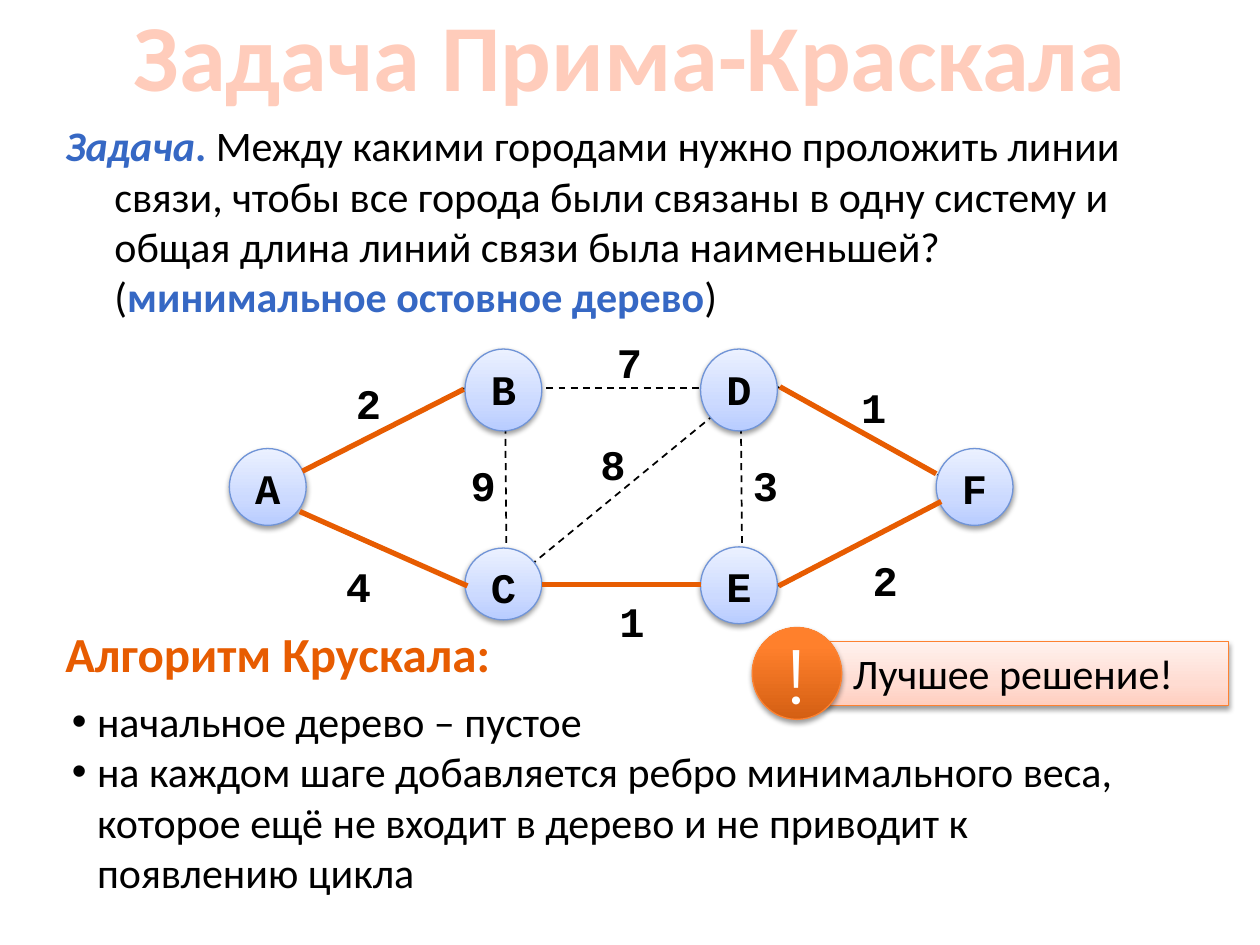
import pptx
import pptx.util
import pptx.dml.color
import pptx.enum.dml
import pptx.enum.shapes
import pptx.enum.text
import pptx.oxml
import pptx.oxml.ns
from lxml import etree

COLORS = {
    "page": "FFFFFF", "text": "000000", "title": "FFCCBB", "term": "3668C4",
    "tree": "E75C01", "node_line": "7094D7", "note_line": "FD8231",
}
GRADIENTS = {
    "node": [(0, "B8CCFF"), (35, "CCDAFF"), (100, "EBF1FF")],
    "note": [(0, "FFCEBF"), (35, "FFDCD2"), (100, "FFF2EE")],
    "badge": [(0, "D45F13"), (80, "FF802C"), (100, "FF812E")],
}
BODY = {"name": "Calibri", "size": pptx.util.Pt(24), "bold": False, "italic": False}
GRAPH = {**BODY, "name": "Courier New", "bold": True}
TERM = {**BODY, "bold": True}
OVAL = pptx.enum.shapes.MSO_SHAPE.OVAL
RECT = pptx.enum.shapes.MSO_SHAPE.RECTANGLE
ALIGN = pptx.enum.text.PP_ALIGN
ANCHOR = pptx.enum.text.MSO_ANCHOR


def rgb(key):
    return pptx.dml.color.RGBColor.from_string(COLORS[key])


def set_attributes(target, values):
    for name, value in values.items():
        setattr(target, name, value)


def add_xml(parent, tag, **attributes):
    child = etree.SubElement(parent, pptx.oxml.ns.qn(tag))
    for name, value in attributes.items():
        child.set(name, str(value))
    return child


class GraphSlide:
    """Places elements on a grid of 100 columns by 75 rows."""

    def __init__(self, deck):
        self.cell = deck.slide_width // 100
        self.slide = deck.slides.add_slide(deck.slide_layouts[1])
        self.shapes = self.slide.shapes
        background = self.slide.background.fill
        background.solid()
        background.fore_color.rgb = rgb("page")

    def grid(self, *values):
        return [round(value * self.cell) for value in values]

    def move(self, shape, box):
        set_attributes(shape, dict(zip(("left", "top", "width", "height"), self.grid(*box))))

    def frame(self, shape, insets=(1, 0.5, 1, 0.5), anchor=ANCHOR.TOP, wrap=True):
        names = ("margin_left", "margin_top", "margin_right", "margin_bottom")
        set_attributes(shape.text_frame, {
            "word_wrap": wrap, "vertical_anchor": anchor,
            "auto_size": pptx.enum.text.MSO_AUTO_SIZE.NONE,
            **dict(zip(names, self.grid(*insets))),
        })
        return shape.text_frame

    def fill_paragraph(self, paragraph, runs, align=ALIGN.LEFT, hanging=0):
        """Fill a paragraph with (text, font, colour) runs; None breaks the line."""
        set_attributes(paragraph, {"alignment": align, "space_before": pptx.util.Pt(0)})
        margin, = self.grid(hanging)
        properties = paragraph._p.get_or_add_pPr()
        properties.set("marL", str(margin))
        properties.set("indent", str(-margin))
        for part in runs:
            if part is None:
                paragraph.add_line_break()
                continue
            words, font, color = part
            run = paragraph.add_run()
            run.text = words
            set_attributes(run.font, font)
            run.font.color.rgb = rgb(color)

    def title(self, words, box):
        title = self.shapes.title
        self.move(title, box)
        font = {**TERM, "size": pptx.util.Pt(54)}
        frame = self.frame(title, anchor=ANCHOR.MIDDLE)
        self.fill_paragraph(frame.paragraphs[0], [(words, font, "title")], ALIGN.CENTER)

    def bullets(self, items, box):
        body = self.slide.placeholders[1]
        self.move(body, box)
        frame = self.frame(body)
        for number, item in enumerate(items):
            paragraph = frame.add_paragraph() if number else frame.paragraphs[0]
            self.fill_paragraph(paragraph, [(item, BODY, "text")], hanging=2)
            add_xml(paragraph._p.get_or_add_pPr(), "a:buChar", char="•")

    def text(self, runs, box, hanging=0, wrap=True):
        textbox = self.shapes.add_textbox(*self.grid(*box))
        frame = self.frame(textbox, wrap=wrap)
        self.fill_paragraph(frame.paragraphs[0], runs, hanging=hanging)

    def line(self, start, end, color, width, dashed=False):
        edge = self.shapes.add_connector(
            pptx.enum.shapes.MSO_CONNECTOR.STRAIGHT, *self.grid(*start, *end))
        edge.line.color.rgb = rgb(color)
        edge.line.width = pptx.util.Pt(width)
        if dashed:
            edge.line.dash_style = pptx.enum.dml.MSO_LINE.DASH
        add_xml(edge._element.spPr, "a:effectLst")

    def shape(self, kind, box, run, align=ALIGN.CENTER, gradient=None, outline=None, **layout):
        shape = self.shapes.add_shape(kind, *self.grid(*box))
        shape.shadow.inherit = False
        if gradient:
            shape.line.color.rgb = rgb(outline)
            shape.line.width = pptx.util.Pt(0.75)
            self.shade(shape, GRADIENTS[gradient])
        else:
            shape.fill.background()
            shape.line.fill.background()
        self.fill_paragraph(self.frame(shape, **layout).paragraphs[0], [run], align)

    def shade(self, shape, stops):
        """Give a shape an upward gradient and a soft shadow below."""
        shape.fill.gradient()
        shape.fill.gradient_angle = 90
        stop_list = shape._element.spPr.find(".//" + pptx.oxml.ns.qn("a:gsLst"))
        for old in list(stop_list):
            stop_list.remove(old)
        for position, color in stops:
            stop = add_xml(stop_list, "a:gs", pos=position * 1000)
            add_xml(stop, "a:srgbClr", val=color)
        effects = shape._element.spPr.find(pptx.oxml.ns.qn("a:effectLst"))
        shadow = add_xml(effects, "a:outerShdw", blurRad=pptx.util.Pt(3.1),
                         dist=pptx.util.Pt(1.6), dir=5400000, rotWithShape=0)
        add_xml(add_xml(shadow, "a:srgbClr", val="000000"), "a:alpha", val=38000)

    def node(self, letter, column, top, height):
        self.shape(OVAL, (18.2 + 18.7 * column, top, 6.1, height), (letter, GRAPH, "text"),
                   gradient="node", outline="node_line", insets=(0, 0.2, 0, 0))

    def weight(self, value, left, top):
        self.shape(OVAL, (left, top, 6.5, 6.1), (value, GRAPH, "text"), insets=(0, 0, 0, 0))


POSSIBLE_EDGES = [
    ((42.4, 30.8), (56.7, 30.8)), ((23.2, 40.2), (36.9, 46.5)),
    ((24.4, 37.3), (36.9, 30.8)), ((58.8, 32.9), (58.9, 44.3)),
    ((40.6, 46.1), (56.7, 32.9)), ((42.4, 46.5), (56.7, 46.4)),
    ((40.1, 32.9), (40.2, 44.3)), ((61.7, 46.5), (76.6, 38.9)),
    ((61.7, 30.7), (76.6, 38.9)),
]
TREE_EDGES = [
    ((43, 46.4), (55.6, 46.4)), ((61.9, 30.7), (74.3, 37.6)),
    ((24, 37.4), (36.8, 30.9)), ((61.8, 46.5), (74.7, 39.8)),
    ((23.8, 40.6), (37.1, 46.5)),
]
WEIGHTS = [
    ("4", 25.2, 43.6), ("2", 26, 29.1), ("1", 46.9, 46.4), ("2", 67, 43.1), ("9", 35.1, 35.6),
    ("7", 46.7, 25.8), ("8", 45.4, 33.9), ("1", 66.1, 29.4), ("3", 57.5, 35.6),
]
CITIES = [
    ("A", 0, 35.6, 6.1), ("B", 1, 27.7, 6.5), ("C", 1, 43.5, 5.7),
    ("D", 2, 27.7, 6.5), ("E", 2, 43.4, 6.1), ("F", 3, 35.6, 6.1),
]


def main():
    deck = pptx.Presentation()
    deck.slide_width, deck.slide_height = pptx.util.Inches(10), pptx.util.Inches(7.5)
    page = GraphSlide(deck)
    page.title("Задача Прима-Краскала", (0, 0, 100, 8.5))
    page.text([
        ("Задача", {**TERM, "italic": True}, "term"),
        (". ", TERM, "term"),
        ("Между какими городами нужно проложить линии связи, чтобы все города были "
         "связаны в одну систему и общая длина линий связи была наименьшей?", BODY, "text"),
        None,
        ("(", BODY, "text"),
        ("минимальное остовное дерево", TERM, "term"),
        (")", BODY, "text"),
    ], (4.2, 9, 92.2, 17.2), hanging=3.9)

    for start, end in POSSIBLE_EDGES:
        page.line(start, end, "text", 1, dashed=True)
    for label in WEIGHTS:
        page.weight(*label)
    for city in CITIES:
        page.node(*city)
    for start, end in TREE_EDGES:
        page.line(start, end, "tree", 3)

    heading = {**TERM, "size": pptx.util.Pt(28)}
    page.text([("Алгоритм Крускала:", heading, "tree")], (4.2, 49, 36.1, 5.7), wrap=False)
    page.bullets([
        "начальное дерево – пустое",
        "на каждом шаге добавляется ребро минимального веса, которое ещё не входит "
        "в дерево и не приводит к появлению цикла",
    ], (4.7, 54.7, 85.3, 17.2))

    page.shape(RECT, (65.2, 50.9, 32.3, 5.1), ("Лучшее решение!", BODY, "text"), ALIGN.LEFT,
               gradient="note", outline="note_line", insets=(2.5, 0.5, 1, 0.5))
    mark = {**BODY, "name": "Montserrat", "size": pptx.util.Pt(44)}
    page.shape(OVAL, (59.7, 49.8, 7.1, 7.3), ("!", mark, "page"), gradient="badge",
               outline="note_line", anchor=ANCHOR.MIDDLE, wrap=False)
    deck.save("out.pptx")


if __name__ == "__main__":
    main()
